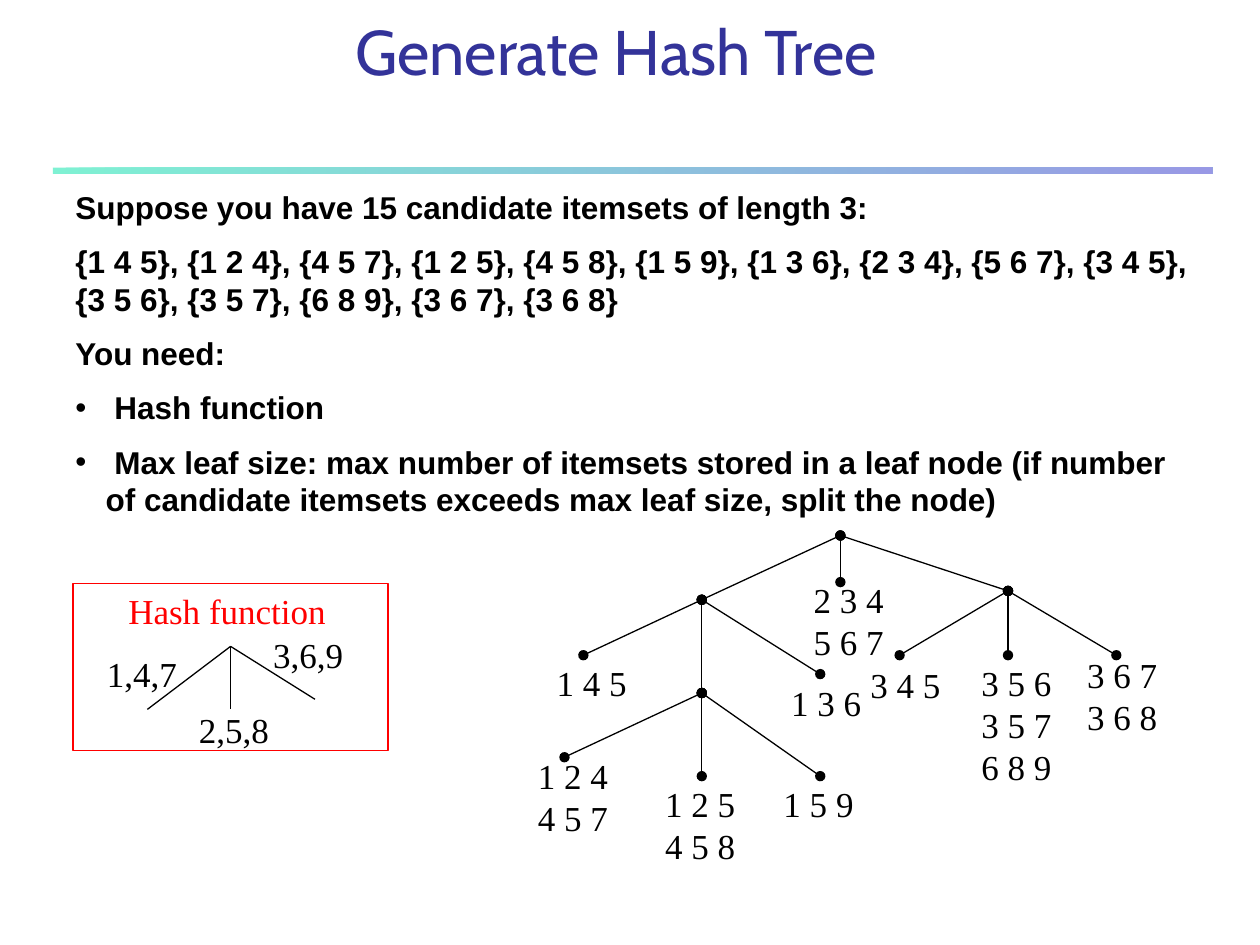
from dataclasses import dataclass

from lxml import etree
from pptx import Presentation
from pptx.dml.color import RGBColor
from pptx.enum.shapes import MSO_CONNECTOR as Connector, MSO_SHAPE as Shape
from pptx.enum.text import MSO_ANCHOR as Anchor, MSO_AUTO_SIZE as AutoSize, PP_ALIGN as Align
from pptx.oxml.ns import qn
from pptx.util import Emu, Pt

PX = 9144  # 100 px to the inch


@dataclass(frozen=True)
class TextStyle:
    font: str
    size: int
    color: str
    bold: bool = False


@dataclass(frozen=True)
class Theme:
    ink: str = "000000"
    accent: str = "FF0000"
    rule_start: str = "00E4A8"
    rule_end: str = "3333CC"
    rule_alpha: int = 50
    line_width: float = 0.75
    paragraph_gap: float = 9.4
    title: TextStyle = TextStyle("Cabin", 36, "333399")
    body: TextStyle = TextStyle("Arial", 18, "000000", True)
    label: TextStyle = TextStyle("Times New Roman", 20, "000000")
    caption: TextStyle = TextStyle("Times New Roman", 20, "FF0000")


@dataclass(frozen=True)
class Node:
    x: int
    y: int
    children: tuple = ()
    itemsets: tuple = ()
    label_at: tuple = ()


def px(*lengths):
    return [Emu(length * PX) for length in lengths]


class SlideBuilder:
    def __init__(self, slide, theme):
        self.slide = slide
        self.theme = theme

    def add_run(self, paragraph, text, style):
        run = paragraph.add_run()
        run.text = text
        run.font.name = style.font
        run.font.size = Pt(style.size)
        run.font.bold = style.bold
        run.font.color.rgb = RGBColor.from_string(style.color)

    def title(self, text, left, top, width, height):
        heading = self.slide.shapes.title
        heading.left, heading.top, heading.width, heading.height = px(left, top, width, height)
        frame = heading.text_frame
        frame.auto_size = AutoSize.NONE
        frame.vertical_anchor = Anchor.BOTTOM
        frame.paragraphs[0].alignment = Align.CENTER
        self.add_run(frame.paragraphs[0], text, self.theme.title)

    def rule(self, left, top, width, height):
        bar = self.slide.shapes.add_shape(Shape.RECTANGLE, *px(left, top, width, height))
        bar.shadow.inherit = False
        bar.line.fill.background()
        bar.fill.gradient()
        bar.fill.gradient_angle = 0
        for stop, color in zip(bar.fill.gradient_stops, (self.theme.rule_start, self.theme.rule_end)):
            stop.color.rgb = RGBColor.from_string(color)
        for color in bar._element.spPr.iter(qn("a:srgbClr")):
            etree.SubElement(color, qn("a:alpha"), val=str(self.theme.rule_alpha * 1000))

    def text(self, lines, left, top, width, height, style, wrap=False):
        box = self.slide.shapes.add_textbox(*px(left, top, width, height))
        frame = box.text_frame
        frame.word_wrap = wrap
        frame.auto_size = AutoSize.SHAPE_TO_FIT_TEXT
        for i, line in enumerate(lines):
            paragraph = frame.add_paragraph() if i else frame.paragraphs[0]
            self.add_run(paragraph, line, style)
        return frame.paragraphs

    def label(self, lines, left, top):
        self.text(lines, left, top, 76, 10 + 33 * len(lines), self.theme.label)

    def bullet(self, paragraph, indent):
        props = paragraph._p.get_or_add_pPr()
        props.set("marL", str(indent * PX))
        props.set("indent", str(-indent * PX))
        etree.SubElement(props, qn("a:buFont"), typeface=self.theme.body.font)
        etree.SubElement(props, qn("a:buChar"), char="•")

    def line(self, start, end, dots=False):
        edge = self.slide.shapes.add_connector(Connector.STRAIGHT, *px(*start, *end))
        edge.line.color.rgb = RGBColor.from_string(self.theme.ink)
        edge.line.width = Pt(self.theme.line_width)
        properties = edge._element.spPr
        if dots:
            for tag in ("a:headEnd", "a:tailEnd"):
                etree.SubElement(properties.find(qn("a:ln")), qn(tag), type="oval")
        etree.SubElement(properties, qn("a:effectLst"))

    def frame(self, left, top, width, height):
        border = self.slide.shapes.add_shape(Shape.RECTANGLE, *px(left, top, width, height))
        border.shadow.inherit = False
        border.fill.background()
        border.line.color.rgb = RGBColor.from_string(self.theme.accent)
        border.line.width = Pt(self.theme.line_width)

    def tree(self, node):
        if node.itemsets:
            self.label(node.itemsets, *node.label_at)
        for child in node.children:
            self.line((node.x, node.y), (child.x, child.y), dots=True)
            self.tree(child)


def leaf(x, y, label_at, *itemsets):
    return Node(x, y, itemsets=itemsets, label_at=label_at)


HASH_TREE = Node(667, 425, (
    Node(557, 476, (
        leaf(463, 520, (432, 520), "1 4 5"),
        Node(557, 550, (
            leaf(448, 601, (417, 594), "1 2 4", "4 5 7"),
            leaf(557, 616, (518, 616), "1 2 5", "4 5 8"),
            leaf(651, 616, (612, 616), "1 5 9"),
        )),
        leaf(651, 535, (618, 536), "1 3 6"),
    )),
    leaf(667, 462, (636, 454), "2 3 4", "5 6 7"),
    Node(800, 469, (
        leaf(714, 520, (681, 522), "3 4 5"),
        leaf(800, 520, (769, 520), "3 5 6", "3 5 7", "6 8 9"),
        leaf(886, 520, (853, 514), "3 6 7", "3 6 8"),
    )),
))

HASH_ROOT = (183, 513)
HASH_BRANCHES = (  # branch end, label, label position
    ((117, 563), "1,4,7", (75, 513)),
    ((183, 563), "2,5,8", (148, 557)),
    ((250, 555), "3,6,9", (207, 498)),
)

INTRO = (
    "Suppose you have 15 candidate itemsets of length 3:",
    "{1 4 5}, {1 2 4}, {4 5 7}, {1 2 5}, {4 5 8}, {1 5 9}, {1 3 6}, {2 3 4}, {5 6 7}, "
    "{3 4 5}, {3 5 6}, {3 5 7}, {6 8 9}, {3 6 7}, {3 6 8}",
    "You need:",
)
NEEDS = (
    " Hash function",
    " Max leaf size: max number of itemsets stored in a leaf node "
    "(if number of candidate itemsets exceeds max leaf size, split the node)",
)


def main():
    deck = Presentation()
    deck.slide_width, deck.slide_height = px(1000, 750)
    theme = Theme()
    page = SlideBuilder(deck.slides.add_slide(deck.slide_layouts[5]), theme)

    # Heading
    page.rule(42, 133, 920, 5)
    page.title("Generate Hash Tree", 36, 17, 906, 58)

    # Candidate hash tree
    page.tree(HASH_TREE)

    # Hash function
    for end, values, position in HASH_BRANCHES:
        page.line(HASH_ROOT, end)
        page.label([values], *position)
    page.text(["Hash function"], 92, 463, 177, 43, theme.caption)
    page.frame(58, 463, 250, 133)

    # Explanation
    paragraphs = page.text(INTRO + NEEDS, 50, 144, 908, 281, theme.body, wrap=True)
    for paragraph in paragraphs[1:]:
        paragraph.space_before = Pt(theme.paragraph_gap)
    for need in paragraphs[len(INTRO):]:
        page.bullet(need, 24)

    deck.save("out.pptx")


if __name__ == "__main__":
    main()
